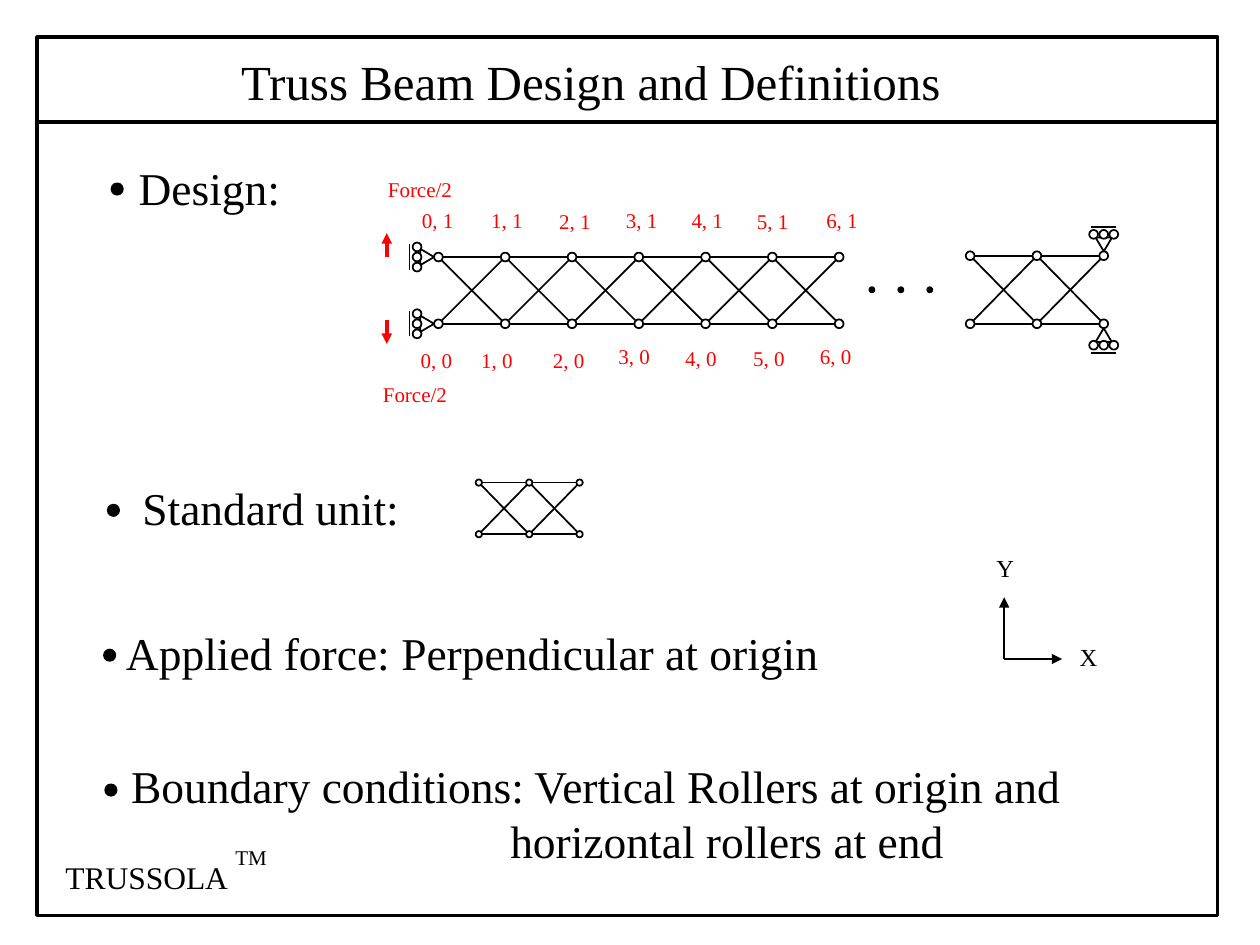
from pptx import Presentation
from pptx import util as u
from pptx.dml.color import RGBColor
from pptx.enum import shapes as sh, text as tx
from pptx.oxml.ns import qn
from lxml import etree

BLACK = RGBColor(0, 0, 0)
WHITE = RGBColor(255, 255, 255)
RED = RGBColor(255, 0, 0)
FONT = "Times New Roman"
KIND = sh.MSO_SHAPE

TITLE = "Truss Beam Design and Definitions"
POINTS = [
    (0.76, 1.22, 1.89, 0.54, (0.93, 1.5), [("Design:", 0.34)]),
    (0.77, 3.76, 2.85, 0.54, (0.9, 4.05), [("Standard unit:", 0.36)]),
    (0.87, 4.91, 6.03, 0.54, (0.87, 5.2),
     [("Applied force: Perpendicular at origin", 0.13)]),
    (0.45, 5.97, 8.76, 0.98, (0.88, 6.27),
     [("Boundary conditions: Vertical Rollers at origin and", 0.59),
      ("horizontal rollers at end", 3.6)]),
]
TOPS = [(3.25, 1.6), (3.8, 1.6), (4.34, 1.61), (4.87, 1.6),
        (5.39, 1.6), (5.91, 1.61), (6.46, 1.6)]
LOWS = [(3.24, 2.71), (3.72, 2.71), (4.29, 2.71), (4.81, 2.68),
        (5.34, 2.69), (5.88, 2.69), (6.41, 2.68)]
FORCES = [(2.98, 1.35), (2.94, 2.98)]
TRUSSES = [
    (3.48, 2.04, 0.53, 0.53, 6, 0.07),
    (7.7, 2.03, 0.53, 0.54, 2, 0.07),
    (3.8, 3.83, 0.4, 0.41, 2, 0.05),
]
ROLLERS = [
    (3.48, 2.04, -1, 0, 90), (3.48, 2.57, -1, 0, 90),
    (8.76, 2.03, 0, -1, 180), (8.76, 2.57, 0, 1, 0),
]
ARROWS = [
    (3.07, 2.54, 3.07, 2.73, RED, 2), (3.07, 2.04, 3.07, 1.85, RED, 2),
    (7.97, 5.23, 7.97, 4.74, BLACK, 1), (7.97, 5.23, 8.43, 5.23, BLACK, 1),
]
AXES = [("X", 8.47, 5.05), ("Y", 7.81, 4.34)]
BRAND = [("TRUSSOLA", 0.42, 6.76, 1.52, 18), ("TM", 1.77, 6.65, 0.51, 12)]

prs = Presentation()
prs.slide_width, prs.slide_height = u.Inches(10), u.Inches(7.5)
page = prs.slides.add_slide(prs.slide_layouts[6]).shapes


def inch(*vals):
    return [u.Inches(v) for v in vals]


def shape(kind, x, y, w, h, fill=None, wide=1, turn=0):
    s = page.add_shape(kind, *inch(x - w / 2, y - h / 2, w, h))
    s.shadow.inherit = False
    s.rotation = turn
    s.line.color.rgb = BLACK
    s.line.width = u.Pt(wide)
    if fill is None:
        s.fill.background()
    else:
        s.fill.solid()
        s.fill.fore_color.rgb = fill


def dot(x, y, size, fill=WHITE):
    shape(KIND.OVAL, x, y, size, size, fill)


def line(x1, y1, x2, y2, color=BLACK, wide=1, arrow=False):
    c = page.add_connector(sh.MSO_CONNECTOR.STRAIGHT, *inch(x1, y1, x2, y2))
    c.line.color.rgb = color
    c.line.width = u.Pt(wide)
    props = c._element.spPr
    if arrow:
        etree.SubElement(props.find(qn("a:ln")), qn("a:tailEnd"), type="triangle")
    etree.SubElement(props, qn("a:effectLst"))


def label(lines, x, y, w, h, size, color=BLACK, right=0.1, align=tx.PP_ALIGN.LEFT):
    frame = page.add_textbox(*inch(x, y, w, h)).text_frame
    frame.word_wrap = True
    first = lines[0][1]
    frame.margin_left, frame.margin_right = inch(first, right)
    for i, (words, left) in enumerate(lines):
        p = frame.add_paragraph() if i else frame.paragraphs[0]
        p.alignment = align
        if left > first:
            p._p.get_or_add_pPr().set("marL", str(u.Inches(left - first)))
        r = p.add_run()
        r.text = words
        r.font.name, r.font.size = FONT, u.Pt(size)
        r.font.color.rgb = color


def truss(x, y, step, high, count, size):
    low = y + high
    cols = [x + i * step for i in range(count + 1)]
    for a, b in zip(cols, cols[1:]):
        for y1, y2 in [(y, y), (low, low), (y, low), (low, y)]:
            line(a, y1, b, y2)
    for a in cols:
        dot(a, y, size)
        dot(a, low, size)


def roller(x, y, dx, dy, turn):
    def at(out, side):
        return x + dx * out + dy * side, y + dy * out + dx * side

    shape(KIND.ISOSCELES_TRIANGLE, *at(0.09, 0), 0.13, 0.11, turn=turn)
    for side in (-0.08, 0, 0.08):
        dot(*at(0.17, side), 0.07)
    line(*at(0.23, -0.1), *at(0.23, 0.1))


shape(KIND.RECTANGLE, 4.98, 3.78, 9.37, 6.97, wide=2)
line(0.3, 0.97, 9.67, 0.97, wide=2)
label([(TITLE, 0.1)], 1.31, 0.36, 7.35, 0.57, 28, right=0.69,
      align=tx.PP_ALIGN.CENTER)
for x, y, w, h, spot, lines in POINTS:
    label(lines, x, y, w, h, 26)
    dot(*spot, 0.09, BLACK)
for row, places in ((1, TOPS), (0, LOWS)):
    for col, (x, y) in enumerate(places):
        label([(f"{col}, {row}", 0.1)], x, y, 0.56, 0.3, 12, RED)
for x, y in FORCES:
    label([("Force/2", 0.1)], x, y, 0.82, 0.3, 12, RED)
for args in ROLLERS:
    roller(*args)
for args in TRUSSES:
    truss(*args)
for i in range(3):
    dot(6.92 + i * 0.23, 2.3, 0.04, BLACK)
for args in ARROWS:
    line(*args, arrow=True)
for name, x, y in AXES:
    label([(name, 0.1)], x, y, 0.42, 0.34, 14)
for name, x, y, w, size in BRAND:
    label([(name, 0.1)], x, y, w, 0.4, size)

prs.save("out.pptx")
